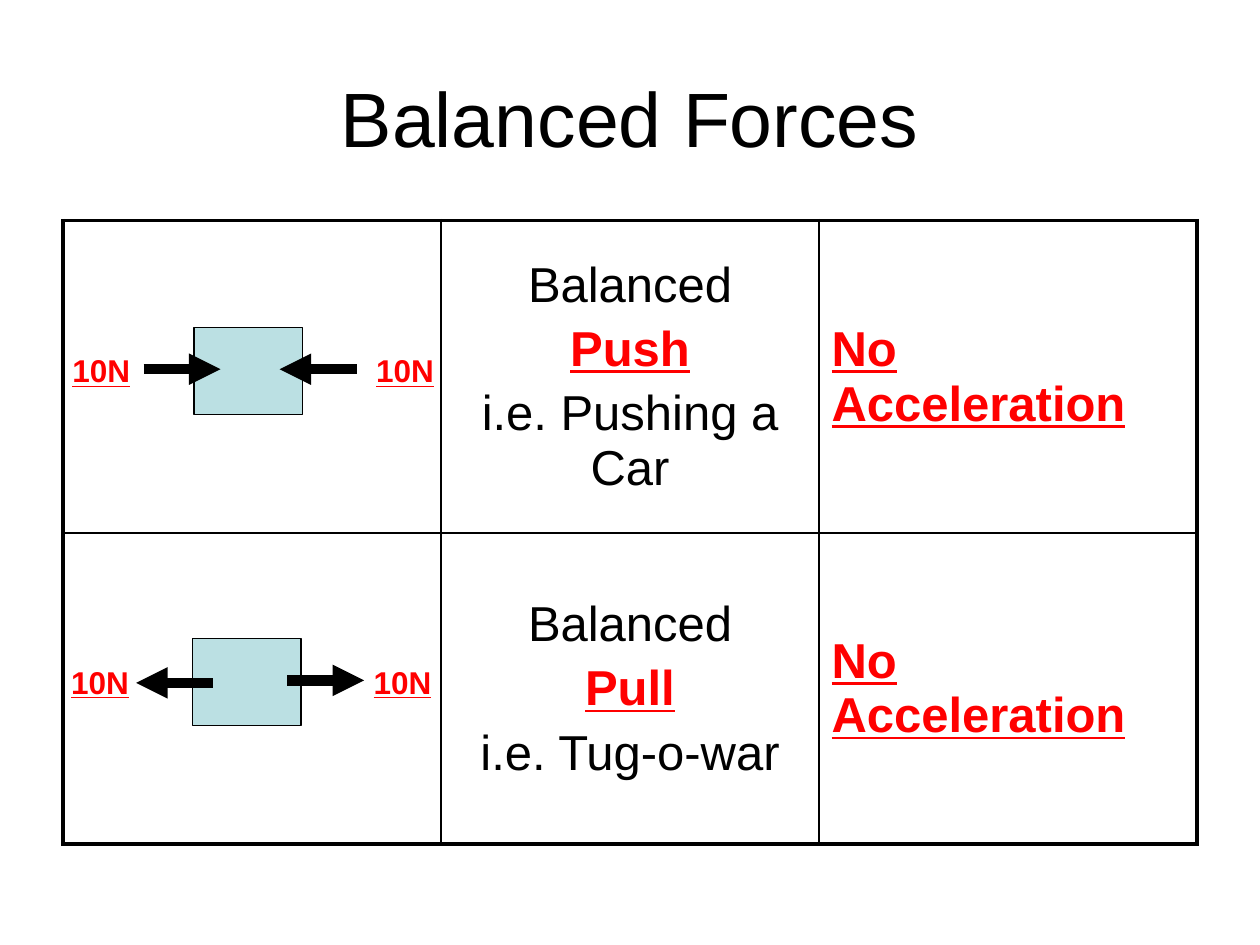
from dataclasses import dataclass

from lxml.etree import SubElement
from pptx import Presentation
from pptx.dml.color import RGBColor
from pptx.enum.shapes import MSO_CONNECTOR, MSO_SHAPE
from pptx.enum.text import MSO_ANCHOR as Anchor, PP_ALIGN as Align
from pptx.oxml.ns import qn
from pptx.util import Pt


@dataclass(frozen=True)
class Theme:
    font: str = "Arial"
    black: RGBColor = RGBColor(0, 0, 0)
    red: RGBColor = RGBColor(0xFF, 0, 0)
    box: RGBColor = RGBColor(0xBB, 0xE0, 0xE3)
    title: int = 44
    body: int = 28
    label: int = 18
    outer_border: float = 2.25
    inner_border: float = 1


theme = Theme()


def write(frame, lines, size, align=Align.CENTER, anchor=Anchor.MIDDLE):
    """Fill a text frame with (text, is_key) lines; key lines are bold red underlined."""
    frame.word_wrap = True
    frame.vertical_anchor = anchor
    for index, (text, is_key) in enumerate(lines):
        paragraph = frame.add_paragraph() if index else frame.paragraphs[0]
        paragraph.alignment = align
        paragraph.space_before = Pt(0.2 * size if index else 0)
        run = paragraph.add_run()
        run.text = text
        font = run.font
        font.name, font.size = theme.font, Pt(size)
        font.bold = font.underline = is_key
        font.color.rgb = theme.red if is_key else theme.black


def add_border(cell, side, width):
    line = SubElement(cell._tc.get_or_add_tcPr(), qn(f"a:{side}"), w=str(Pt(width)))
    fill = SubElement(line, qn("a:solidFill"))
    SubElement(fill, qn("a:srgbClr"), val=str(theme.black))


presentation = Presentation()
presentation.slide_width, presentation.slide_height = Pt(720), Pt(540)
slide = presentation.slides.add_slide(presentation.slide_layouts[6])
shapes = slide.shapes

title = shapes.add_textbox(Pt(36), Pt(21.6), Pt(648), Pt(90))
write(title.text_frame, [("Balanced Forces", False)], theme.title)

# Table: diagram, description, result
descriptions = [
    [("Balanced", False), ("Push", True), ("i.e. Pushing a Car", False)],
    [("Balanced", False), ("Pull", True), ("i.e. Tug-o-war", False)],
]
result = [("No Acceleration", True)]
row_heights = [178.6, 177.8]
column_count = 3
table = shapes.add_table(len(row_heights), column_count, Pt(36), Pt(126),
                         Pt(648), Pt(sum(row_heights))).table
table.first_row = table.horz_banding = False
for column in table.columns:
    column.width = Pt(648 / column_count)

for row, height in enumerate(row_heights):
    table.rows[row].height = Pt(height)
    write(table.cell(row, 1).text_frame, descriptions[row], theme.body)
    write(table.cell(row, 2).text_frame, result, theme.body, Align.LEFT)
    for column in range(column_count):
        cell = table.cell(row, column)
        cell.vertical_anchor = Anchor.MIDDLE
        outer_sides = {
            "lnL": column == 0,
            "lnR": column == column_count - 1,
            "lnT": row == 0,
            "lnB": row == len(row_heights) - 1,
        }
        for side, is_outer in outer_sides.items():
            add_border(cell, side, theme.outer_border if is_outer else theme.inner_border)
        cell.fill.background()

# Force diagrams: box corner, label corners, arrows as (tail x, tip x, y)
diagrams = [
    ((110.9, 187.2), (33.8, 207.4), 197.3, [(82.1, 126, 211), (203.8, 159.8, 211)]),
    ((110.2, 365), (33.1, 205.9), 375.1, [(164.2, 208.1, 388.8), (121.7, 77.8, 390.2)]),
]
for (box_left, box_top), label_lefts, label_top, arrows in diagrams:
    box = shapes.add_shape(MSO_SHAPE.RECTANGLE, Pt(box_left), Pt(box_top), Pt(61.9), Pt(49.7))
    box.shadow.inherit = False
    box.fill.solid()
    box.fill.fore_color.rgb = theme.box
    box.line.color.rgb = theme.black
    box.line.width = Pt(0.75)

    for tail, tip, y in arrows:
        arrow = shapes.add_connector(MSO_CONNECTOR.STRAIGHT, Pt(tail), Pt(y), Pt(tip), Pt(y))
        arrow.line.color.rgb = theme.black
        arrow.line.width = Pt(6)
        SubElement(arrow.line._get_or_add_ln(), qn("a:tailEnd"), type="triangle")
        SubElement(arrow._element.spPr, qn("a:effectLst"))

    for left in label_lefts:
        label = shapes.add_textbox(Pt(left), Pt(label_top), Pt(48.2), Pt(28.8))
        label.text_frame.margin_left = label.text_frame.margin_right = 0
        write(label.text_frame, [("10N", True)], theme.label, anchor=Anchor.TOP)

presentation.save("out.pptx")
